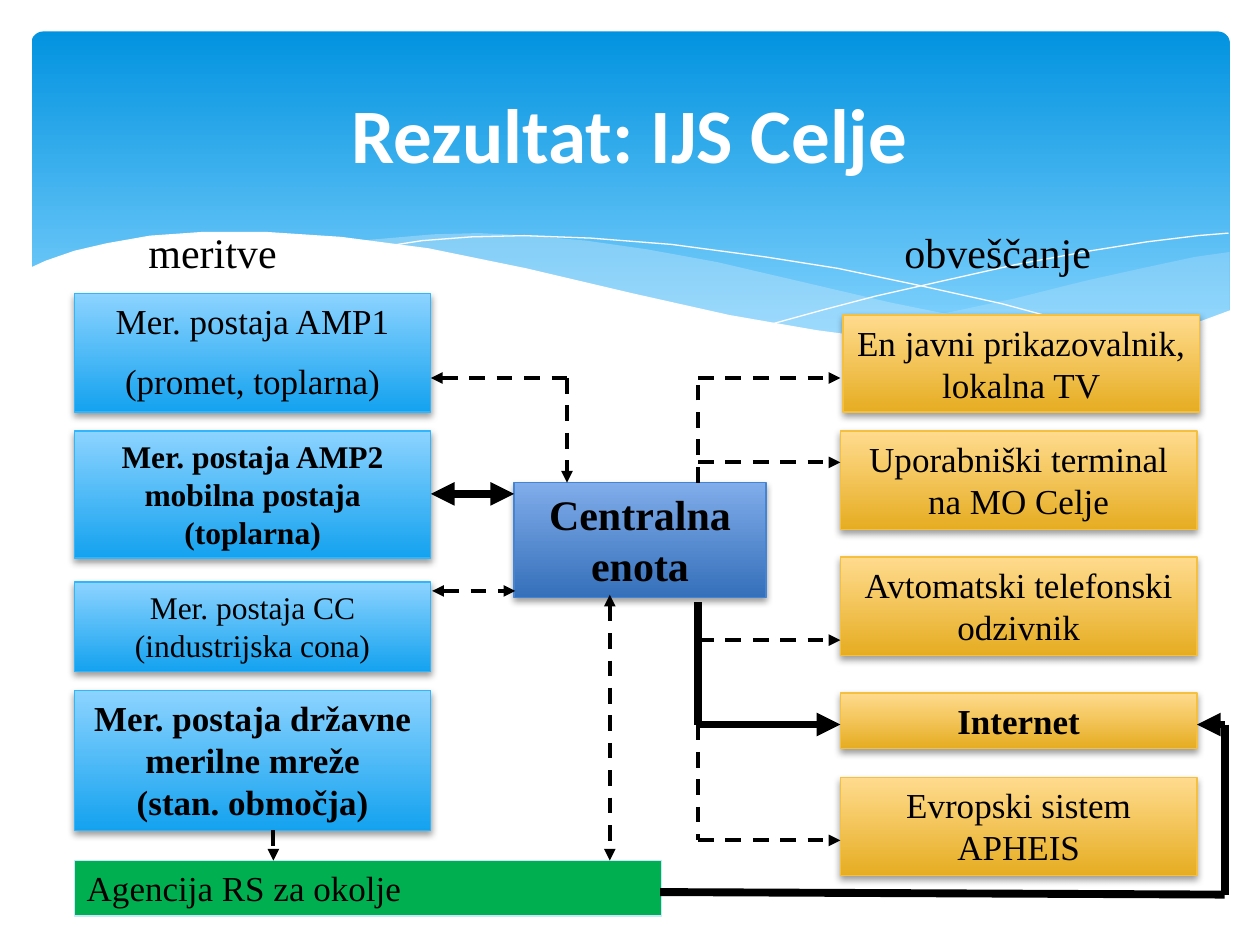
from lxml import etree
from pptx import Presentation
from pptx.dml.color import RGBColor
from pptx.enum.dml import MSO_LINE
from pptx.enum.shapes import MSO_CONNECTOR, MSO_SHAPE
from pptx.enum.text import MSO_ANCHOR, PP_ALIGN
from pptx.oxml.ns import qn
from pptx.util import Inches, Pt

RECT, ROUNDED = MSO_SHAPE.RECTANGLE, MSO_SHAPE.ROUNDED_RECTANGLE
STRAIGHT, DASH = MSO_CONNECTOR.STRAIGHT, MSO_LINE.DASH
LEFT, CENTER = PP_ALIGN.LEFT, PP_ALIGN.CENTER
TOP, MIDDLE = MSO_ANCHOR.TOP, MSO_ANCHOR.MIDDLE

SERIF = "Times New Roman"
COLORS = {
    "black": "000000", "white": "FFFFFF", "pale": "C6E7FC", "agency": "00B050",
    "sky top": "0293E0", "sky bottom": "83D3FE",
}
# Gradient start, gradient end, outline
BOX_STYLES = {
    "station": ("8CD3FF", "14A2EF", "31B6FD"),
    "notice": ("FFDB8E", "E6AD22", "F5C040"),
    "central": ("80ACEA", "3570BA", "4584D3"),
}

# Wave outlines in inches from the top left of the wave band
RIGHT_WAVE = [
    (9.53, .16), (9.25, .2), (8.83, .29), (8.38, .39), (7.82, .53), (7.06, .69),
    (6.38, .81), (6.68, .85), (7.09, .9), (7.58, .93), (8.01, .93), (8.4, .91),
    (8.74, .86), (9.05, .79), (9.26, .73), (9.53, .63)]
MIDDLE_WAVE = [
    (8.7, .89), (8.14, .81), (7.52, .7), (6.83, .56), (6.06, .38), (5.46, .24),
    (4.91, .14), (4.42, .07), (3.97, .03), (3.57, .01), (3.21, .02), (2.63, .07),
    (3.19, .15), (3.81, .27), (4.26, .38), (5.07, .56), (5.78, .71), (6.42, .82),
    (6.99, .9), (7.5, .93), (7.95, .94), (8.34, .93)]
FALLING_CURVE = [
    (2.86, .11), (3.12, .07), (3.51, .04), (3.93, .03), (4.46, .05), (5.1, .1),
    (5.85, .2), (6.42, .29), (7.04, .42), (7.72, .57), (8.46, .77), (8.84, .88)]
RISING_CURVE = [
    (5.9, .73), (6.3, .62), (6.72, .51), (7.25, .39), (7.83, .26), (8.43, .15),
    (8.87, .08), (9.28, .03), (9.52, .01)]
FRONT_WAVE = [
    (0, .29), (.13, .23), (.36, .15), (.62, .09), (.96, .03), (1.38, 0), (1.88, 0),
    (2.48, .04), (3.17, .13), (3.95, .29), (4.8, .49), (5.56, .66), (6.25, .78),
    (6.85, .86), (7.38, .91), (7.86, .93), (8.27, .91), (8.64, .87), (8.97, .81),
    (9.27, .72), (9.54, .62), (9.54, 1.45), (0, 1.45)]


def rgb(value):
    return RGBColor.from_string(COLORS.get(value, value))


def fill_gradient(shape, start, end, end_position=1.0):
    shape.fill.gradient()
    shape.fill.gradient_angle = 270
    first, last = shape.fill.gradient_stops
    first.color.rgb, last.color.rgb = rgb(start), rgb(end)
    first.position, last.position = 0, end_position


def add_shadow(shape):
    effects = shape.element.spPr.find(qn("a:effectLst"))
    shadow = etree.SubElement(effects, qn("a:outerShdw"), blurRad=str(Pt(4)),
                              dist=str(Pt(2)), dir="5400000", rotWithShape="0")
    color = etree.SubElement(shadow, qn("a:srgbClr"), val=COLORS["black"])
    etree.SubElement(color, qn("a:alpha"), val="38000")


def set_text(shape, text, size, bold=False, align=CENTER, anchor=TOP,
             color="black", font=SERIF, gap=0):
    frame = shape.text_frame
    frame.text = text
    frame.word_wrap = True
    frame.vertical_anchor = anchor
    for index, paragraph in enumerate(frame.paragraphs):
        paragraph.alignment = align
        paragraph.space_before = Pt(gap if index else 0)
        for run in paragraph.runs:
            run.font.size, run.font.bold, run.font.name = Pt(size), bold, font
            run.font.color.rgb = rgb(color)


def add_wave(slide, left, top, points, color, opacity=100, filled=True):
    corners = [(Inches(left + x), Inches(top + y)) for x, y in points]
    builder = slide.shapes.build_freeform(*corners[0])
    builder.add_line_segments(corners[1:], close=filled)
    wave = builder.convert_to_shape()
    wave.shadow.inherit = False
    if not filled:
        wave.fill.background()
        wave.line.color.rgb = rgb(color)
        wave.line.width = Pt(0)
        return
    wave.line.fill.background()
    wave.fill.solid()
    wave.fill.fore_color.rgb = rgb(color)
    if opacity < 100:
        tone = wave.element.spPr.find(qn("a:solidFill"))[0]
        etree.SubElement(tone, qn("a:alpha"), val=str(opacity * 1000))


def add_header(slide, left, top, width, height):
    sky = slide.shapes.add_shape(ROUNDED, Inches(left), Inches(top),
                                 Inches(width), Inches(height))
    sky.adjustments[0] = 0.034
    sky.shadow.inherit = False
    sky.line.fill.background()
    fill_gradient(sky, "sky top", "sky bottom", 0.9)

    band = (left - 0.02, top + 1.59)
    add_wave(slide, *band, RIGHT_WAVE, "pale", 29)
    add_wave(slide, *band, MIDDLE_WAVE, "pale", 40)
    for curve in (FALLING_CURVE, RISING_CURVE):
        add_wave(slide, *band, curve, "white", filled=False)
    add_wave(slide, *band, FRONT_WAVE, "white")

    title = slide.shapes.title
    title.left, title.top = Inches(left + 0.25), Inches(top + 0.12)
    title.width, title.height = Inches(9), Inches(1.37)
    set_text(title, "Rezultat: IJS Celje", 44, True, anchor=MIDDLE,
             color="white", font="Calibri")
    title.element.getparent().append(title.element)  # in front of the waves


def add_box(slide, left, top, width, height, text, style, size=20, bold=False, gap=0):
    box = slide.shapes.add_shape(RECT, Inches(left), Inches(top),
                                 Inches(width), Inches(height))
    box.shadow.inherit = False
    box.line.width = Pt(0.75)
    if style in BOX_STYLES:
        start, end, outline = BOX_STYLES[style]
        fill_gradient(box, start, end)
        box.line.color.rgb = rgb(outline)
        add_shadow(box)
    else:
        box.fill.solid()
        box.fill.fore_color.rgb = rgb(style)
        box.line.color.rgb = rgb("pale")
    set_text(box, text, size, bold, LEFT if style == "agency" else CENTER, gap=gap)


def add_heading(slide, left, top, width, text):
    heading = slide.shapes.add_textbox(Inches(left), Inches(top), Inches(width), Inches(0.5))
    set_text(heading, text, 24, align=LEFT)


def add_stations(slide, left, top, width):
    add_heading(slide, left + 0.49, top, 1.42, "meritve")
    for offset, height, text, size, bold, gap in (
            (0.58, 0.94, "Mer. postaja AMP1\n(promet, toplarna)", 20, False, 10),
            (1.67, 1.01, "Mer. postaja AMP2 mobilna postaja (toplarna)", 18, True, 0),
            (2.87, 0.71, "Mer. postaja CC (industrijska cona)", 18, False, 0),
            (3.73, 1.11, "Mer. postaja državne merilne mreže\n(stan. območja)", 20, True, 0)):
        add_box(slide, left, top + offset, width, height, text, "station", size, bold, gap)
    add_box(slide, left, top + 5.08, 4.66, 0.44, "Agencija RS za okolje", "agency")


def add_notices(slide, left, top, width):
    add_heading(slide, left + 0.41, top, 1.83, "obveščanje")
    for shift, offset, height, text in (
            (0.02, 0.75, 0.77, "En javni prikazovalnik, lokalna TV"),
            (0, 1.67, 0.78, "Uporabniški terminal na MO Celje"),
            (0, 2.67, 0.78, "Avtomatski telefonski odzivnik"),
            (0, 3.75, 0.44, "Internet"),
            (0, 4.42, 0.78, "Evropski sistem APHEIS")):
        add_box(slide, left + shift, top + offset, width, height, text, "notice",
                bold=text == "Internet")


def add_link(slide, start, end, ends="", thick=False):
    """Draw a link; ends holds "head" and "tail" for arrows at start and end."""
    link = slide.shapes.add_connector(STRAIGHT, *map(Inches, start + end))
    link.line.color.rgb = rgb("black")
    link.line.width = Pt(4.5 if thick else 2.25)
    if not thick:
        link.line.dash_style = DASH
    for end_name in ends.split():
        etree.SubElement(link.line._get_or_add_ln(), qn(f"a:{end_name}End"), type="triangle")
    etree.SubElement(link.element.spPr, qn("a:effectLst"))


def add_links(slide, stations_right, trunk, notices_left, loop):
    add_link(slide, (stations_right, 3), (4.5, 3), "head")
    add_link(slide, (4.5, 3), (4.5, 3.83), "tail")
    add_link(slide, (stations_right, 3.92), (4.08, 3.92), "head tail", thick=True)
    add_link(slide, (stations_right + 0.01, 4.69), (4.09, 4.69), "head tail")
    add_link(slide, (2.17, 6.59), (2.17, 6.83), "tail")
    add_link(slide, (4.84, 4.72), (4.84, 6.83), "head tail")

    add_link(slide, (trunk, 3.83), (trunk, 3))
    add_link(slide, (trunk, 5.75), (trunk, 6.67))
    add_link(slide, (trunk, 4.78), (trunk, 5.75), thick=True)
    for y in (3, 3.67, 5.08, 5.75, 6.67):
        add_link(slide, (trunk, y), (notices_left, y), "tail", thick=y == 5.75)

    add_link(slide, (loop, 7.1), (5.24, 7.08), thick=True)
    add_link(slide, (loop, 5.75), (loop, 7.1), thick=True)
    add_link(slide, (loop, 5.75), (9.5, 5.75), "tail", thick=True)


def main():
    deck = Presentation()
    deck.slide_width, deck.slide_height = Inches(10), Inches(7.5)
    slide = deck.slides.add_slide(deck.slide_layouts[5])
    add_header(slide, 0.25, 0.25, 9.51, 2.7)
    add_stations(slide, 0.59, 1.75, 2.83)
    add_box(slide, 4.08, 3.83, 2, 0.91, "Centralna enota", "central", 24, True)
    add_notices(slide, 6.67, 1.75, 2.83)
    add_links(slide, stations_right=3.42, trunk=5.54, notices_left=6.67, loop=9.72)
    deck.save("out.pptx")


if __name__ == "__main__":
    main()
